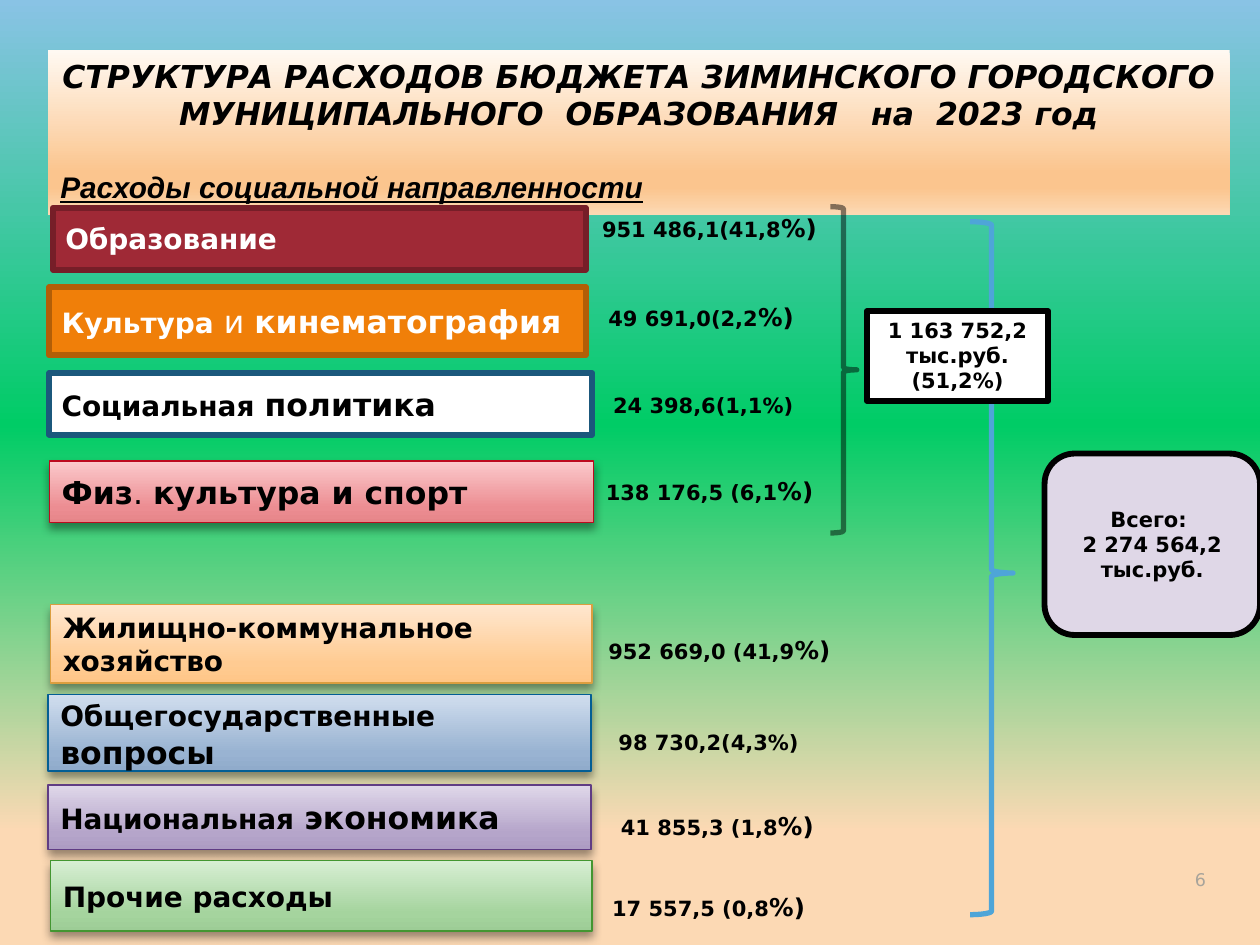
import pptx
import pptx.util
import pptx.dml.color
import pptx.enum.shapes
import pptx.enum.text
import pptx.oxml
import pptx.oxml.ns

Inches, Pt = pptx.util.Inches, pptx.util.Pt
RGB = pptx.dml.color.RGBColor.from_string
SHAPE = pptx.enum.shapes.MSO_SHAPE
ALIGN = {"l": pptx.enum.text.PP_ALIGN.LEFT, "c": pptx.enum.text.PP_ALIGN.CENTER,
         "r": pptx.enum.text.PP_ALIGN.RIGHT}
ANCHOR = {"t": pptx.enum.text.MSO_ANCHOR.TOP, "m": pptx.enum.text.MSO_ANCHOR.MIDDLE,
          "b": pptx.enum.text.MSO_ANCHOR.BOTTOM}
NS = pptx.oxml.ns.nsdecls("a")

THEME = {
    "font": "DejaVu Sans", "sub_font": "Arial",
    "black": "000000", "white": "FFFFFF", "grey": "A8A49B", "blue": "4EA5D8",
    "total": "DFD7E7",
    "page": [(0, "89C3E5"), (45, "00CC66"), (88, "FCD9B4")],
    "header": [(0, "FFF9F2"), (74, "FBC58E"), (83, "FBC58E"), (100, "FCD9B4")],
    "big": 18, "sub": 17, "mid": 16, "percent": 14, "small": 12, "number": 10,
    "thick": 3.35, "brace": 3, "thin": 0.75,
}
BIG, MID, PCT = THEME["big"], THEME["mid"], THEME["percent"]

# Content: a paragraph is a list of runs (text, format overrides)
TITLE = ("СТРУКТУРА РАСХОДОВ БЮДЖЕТА ЗИМИНСКОГО ГОРОДСКОГО "
         "МУНИЦИПАЛЬНОГО  ОБРАЗОВАНИЯ   на  2023 год")
SUBTITLE = "Расходы социальной направленности"
SOCIAL = ["1 163 752,2", "тыс.руб. (51,2%)"]
TOTAL = ["Всего: ", "2 274 564,2", "тыс.руб."]
PLAIN, LARGE = {"size": BIG, "bold": False}, {"size": BIG}

# Bars: runs, (left, top, width, height), fill (colour or bottom-to-top ramp), line
BARS = [
    ([("Образование", {})], (0.42, 1.65, 4.23, 0.49), "9F2936", "761E28"),
    ([("Культура", {}), (" и ", PLAIN), ("кинематография", LARGE)],
     (0.39, 2.28, 4.26, 0.54), "F07F09", "B25E07"),
    ([("Социальная", {}), (" ", PLAIN), ("политика", LARGE)],
     (0.39, 2.96, 4.31, 0.49), "FFFFFF", "1B587C"),
    ([("Физ", LARGE), (". ", PLAIN), ("культура и спорт", LARGE)],
     (0.39, 3.66, 4.32, 0.49), ("E68589", "EC8D92", "FBCACC"), "BC0B1F"),
    ([("Жилищно-коммунальное хозяйство", {})],
     (0.4, 4.8, 4.3, 0.62), ("FFC687", "FFCB92", "FFE7CF"), "DB9E3F"),
    ([("Общегосударственные", {}), (" ", PLAIN), ("вопросы", LARGE)],
     (0.38, 5.51, 4.31, 0.61), ("90ABCB", "99B3D2", "D1DEEE"), "035E94"),
    ([("Национальная", {}), (" ", PLAIN), ("экономика", LARGE)],
     (0.38, 6.23, 4.31, 0.51), ("AD9CC3", "B5A5CA", "DFD7E9"), "603C84"),
    ([("Прочие расходы", {})],
     (0.4, 6.83, 4.3, 0.56), ("9DCD96", "A5D49E", "D7EED3"), "439631"),
]
LIGHT_TEXT_BARS = 2

# Amounts: number, tail in larger type, (left, top, width, height), anchor
AMOUNTS = [
    ("951 486,1(41,8", "%)", (4.68, 1.64, 2.17, 0.57), "t"),
    ("49 691,0(2,2", "%)", (4.73, 2.35, 2, 0.34), "t"),
    (" 24 398,6(1,1%)", "", (4.71, 2.86, 2.26, 0.71), "m"),
    ("138 176,5 (6,1", "%)", (4.71, 3.52, 2.14, 0.54), "b"),
    ("952 669,0 (41,9", "%)", (4.73, 4.78, 2.3, 0.54), "b"),
    ("98 730,2(4,3%)", "", (4.81, 5.54, 2.02, 0.5), "b"),
    ("41 855,3 (1,8", "%)", (4.83, 6.18, 2, 0.54), "b"),
    ("17 557,5 (0,8", "%)", (4.76, 6.62, 2.02, 0.74), "b"),
]


def set_gradient(fill, element, stops, angle):
    fill.gradient()
    grad = next(element.iter(pptx.oxml.ns.qn("a:gradFill")))
    for child in list(grad):
        grad.remove(child)
    marks = "".join(f'<a:gs pos="{pos * 1000}"><a:srgbClr val="{c}"/></a:gs>'
                    for pos, c in stops)
    grad.append(pptx.oxml.parse_xml(f"<a:gsLst {NS}>{marks}</a:gsLst>"))
    grad.append(pptx.oxml.parse_xml(f'<a:lin {NS} ang="{angle * 60000}" scaled="0"/>'))


def add_shape(s, kind, box, fill=None, line=None, width=0, angle=90):
    sp = s.shapes.add_shape(kind, *map(Inches, box))
    sp.shadow.inherit = False
    if fill is None:
        sp.fill.background()
    elif isinstance(fill, str):
        sp.fill.solid()
        sp.fill.fore_color.rgb = RGB(fill)
    else:
        set_gradient(sp.fill, sp._element.spPr, fill, angle)
    if line:
        sp.line.color.rgb = RGB(line)
        sp.line.width = Pt(width)
    else:
        sp.line.fill.background()
    return sp


def write(sp, paragraphs, anchor="t", align="l", **fmt):
    """Fill a shape with paragraphs, each a string or a list of (text, overrides)."""
    tf = sp.text_frame
    tf.word_wrap = True
    tf.vertical_anchor = ANCHOR[anchor]
    base = {"size": THEME["small"], "bold": True, "italic": False, "underline": False,
            "font": THEME["font"], "color": THEME["black"], **fmt}
    for i, runs in enumerate(paragraphs):
        p = tf.paragraphs[0] if i == 0 else tf.add_paragraph()
        p.alignment = ALIGN[align]
        for text, extra in [(runs, {})] if isinstance(runs, str) else runs:
            f = {**base, **extra}
            r = p.add_run()
            r.text = text
            r.font.name, r.font.size = f["font"], Pt(f["size"])
            r.font.bold, r.font.italic = f["bold"], f["italic"]
            r.font.underline = f["underline"]
            r.font.color.rgb = RGB(f["color"])
    return tf


def add_text(s, box, paragraphs, **fmt):
    return write(s.shapes.add_textbox(*map(Inches, box)), paragraphs, **fmt)


def add_drop_shadow(sp):
    spPr = sp._element.spPr
    spPr.remove(spPr.find(pptx.oxml.ns.qn("a:effectLst")))
    spPr.append(pptx.oxml.parse_xml(
        f'<a:effectLst {NS}><a:outerShdw blurRad="{Pt(5.2)}" dist="{Pt(3)}" dir="5400000" '
        'rotWithShape="0"><a:srgbClr val="000000"><a:alpha val="40000"/></a:srgbClr>'
        "</a:outerShdw></a:effectLst>"))


def main():
    prs = pptx.Presentation()
    prs.slide_width, prs.slide_height = Inches(10), Inches(7.5)
    s = prs.slides.add_slide(prs.slide_layouts[6])
    set_gradient(s.background.fill, s._element, THEME["page"], 90)

    # Brace for the whole budget, and the page number
    sp = add_shape(s, SHAPE.RIGHT_BRACE, (7.7, 1.76, 0.34, 5.5),
                   line=THEME["blue"], width=THEME["brace"])
    sp.adjustments[1] = 0.507
    add_text(s, (9.17, 6.71, 0.5, 0.4), ["6"], anchor="b", align="r", bold=False,
             size=THEME["number"], color=THEME["grey"])

    # Header
    sp = add_shape(s, SHAPE.RECTANGLE, (0.38, 0.4, 9.38, 1.31), THEME["header"])
    sub = {"size": THEME["sub"], "font": THEME["sub_font"], "underline": True}
    tf = write(sp, [TITLE, [(SUBTITLE, sub)]], align="c", size=BIG, italic=True)
    tf.paragraphs[1].alignment = ALIGN["l"]
    tf.paragraphs[1].space_before = Pt(21)

    # Spending bars
    for i, (runs, box, fill, line) in enumerate(BARS):
        solid = isinstance(fill, str)
        sp = add_shape(s, SHAPE.RECTANGLE, box, fill if solid else list(zip((0, 25, 100), fill)),
                       line, THEME["thick" if solid else "thin"], angle=270)
        if not solid:
            add_drop_shadow(sp)
        write(sp, [runs], anchor="m", size=MID,
              color=THEME["white" if i < LIGHT_TEXT_BARS else "black"])

    # Amounts
    for number, tail, box, anchor in AMOUNTS:
        runs = [(number, {})] + ([(tail, {"size": PCT})] if tail else [])
        add_text(s, box, [runs], anchor=anchor)

    # Subtotal and total
    sp = add_shape(s, SHAPE.RECTANGLE, (6.88, 2.47, 1.44, 0.71), THEME["white"],
                   THEME["black"], THEME["thick"])
    write(sp, SOCIAL, align="c")
    sp = add_shape(s, SHAPE.ROUNDED_RECTANGLE, (8.29, 3.6, 1.71, 1.44), THEME["total"],
                   THEME["black"], THEME["thick"])
    write(sp, TOTAL, anchor="m", align="c")

    # Translucent brace for social spending
    sp = add_shape(s, SHAPE.RIGHT_BRACE, (6.59, 1.64, 0.21, 2.59),
                   line=THEME["black"], width=THEME["brace"])
    color = next(sp.line._get_or_add_ln().iter(pptx.oxml.ns.qn("a:srgbClr")))
    color.append(pptx.oxml.parse_xml(f'<a:alpha {NS} val="47000"/>'))

    prs.save("out.pptx")


if __name__ == "__main__":
    main()
